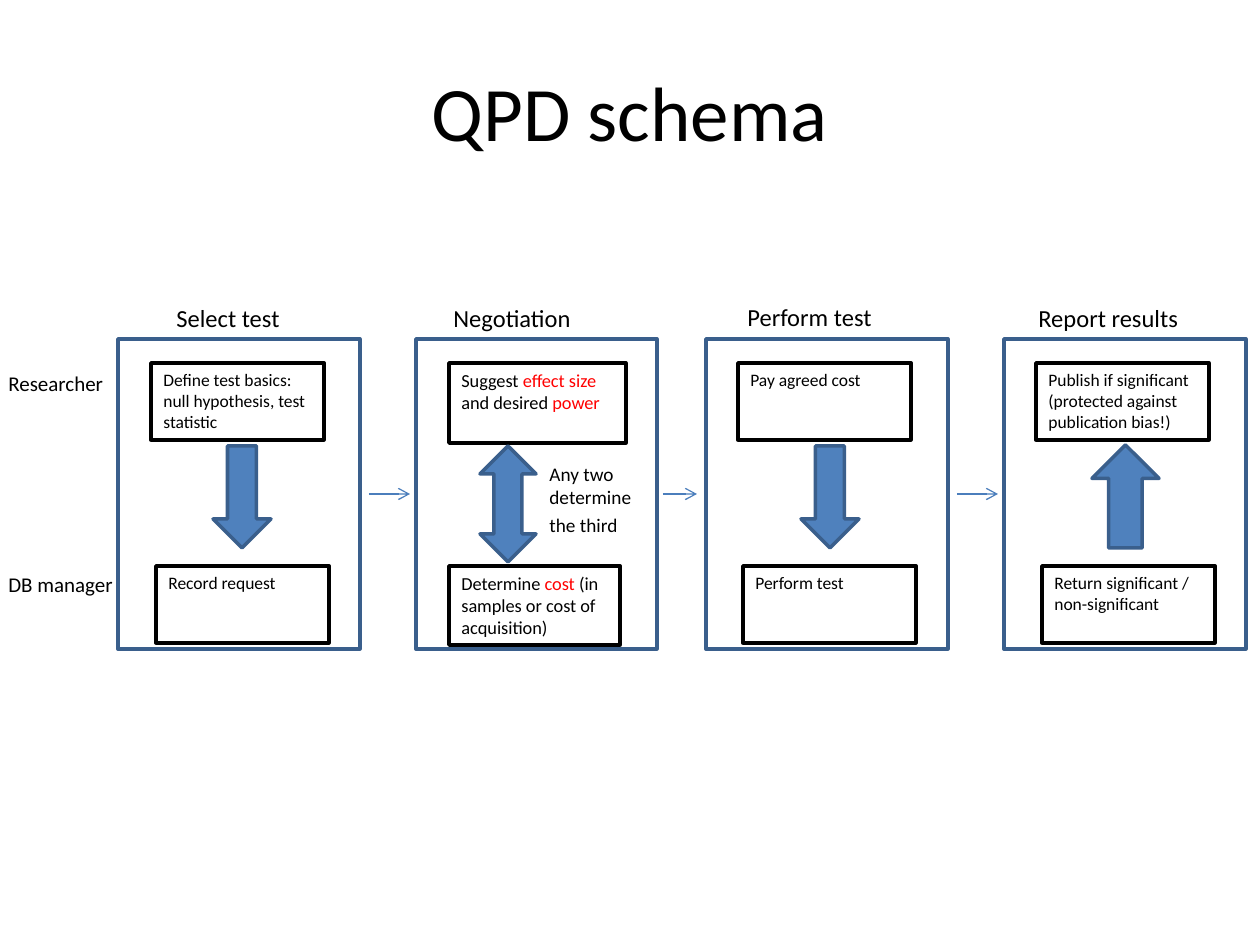
from dataclasses import dataclass

from lxml.etree import SubElement
from pptx import Presentation
from pptx.dml.color import RGBColor
from pptx.enum.shapes import MSO_CONNECTOR as Connector, MSO_SHAPE as Preset
from pptx.enum.text import MSO_ANCHOR as Anchor, PP_ALIGN as Align
from pptx.oxml.ns import qn
from pptx.util import Emu, Pt

PX = 914400 / 126
FONT = "Calibri"
COLORS = {
    "ink": "000000",
    "paper": "FFFFFF",
    "key": "FF0000",
    "arrow": "4F81BD",
    "frame": "3A5F8C",
    "flow": "4B7EBC",
}
PANEL_TOP, PANEL_HEIGHT = 339, 310
RESEARCHER_TOP, MANAGER_TOP = 363, 566
FLOW_Y = 494


@dataclass(frozen=True)
class Rect:
    left: int
    top: int
    width: int
    height: int


@dataclass(frozen=True)
class Run:
    text: str
    size: float
    color: str = "ink"


@dataclass(frozen=True)
class Step:
    left: int
    runs: tuple[Run, ...]
    width: int = 173
    height: int = 77


@dataclass(frozen=True)
class Phase:
    heading: Run
    heading_at: Rect
    left: int
    researcher: Step
    manager: Step
    arrow: Preset
    arrow_at: Rect
    width: int = 242


PHASES = (
    Phase(
        Run("Select test", 14), Rect(164, 297, 238, 43), 118,
        Step(151, (Run("Define test basics: null hypothesis, test statistic", 10),)),
        Step(156, (Run("Record request", 10),)),
        Preset.DOWN_ARROW, Rect(213, 446, 58, 102),
    ),
    Phase(
        Run("Negotiation", 14), Rect(441, 297, 222, 43), 416,
        Step(449, (Run("Suggest ", 10.5), Run("effect size ", 10.5, "key"),
                   Run("and desired ", 10.5), Run("power", 10.5, "key")), 177, 80),
        Step(449, (Run("Determine ", 10.5), Run("cost ", 10.5, "key"),
                   Run("(in samples or cost of acquisition)", 10.5)), 171, 79),
        Preset.UP_DOWN_ARROW, Rect(480, 446, 56, 116), 241,
    ),
    Phase(
        Run("Perform test", 14), Rect(735, 296, 238, 43), 706,
        Step(738, (Run("Pay agreed cost", 10),)),
        Step(743, (Run("Perform test", 10),)),
        Preset.DOWN_ARROW, Rect(801, 446, 58, 102),
    ),
    Phase(
        Run("Report results", 14), Rect(1026, 297, 238, 43), 1004,
        Step(1036, (Run("Publish if significant (protected against publication bias!)", 10),)),
        Step(1042, (Run("Return significant / non-significant", 10),)),
        Preset.UP_ARROW, Rect(1092, 445, 67, 103),
    ),
)
FLOWS = ((369, 410), (663, 697), (957, 998))
ROLES = (("Researcher", 364), ("DB manager", 565))


def px(length: int) -> Emu:
    return Emu(round(length * PX))


def place(rect: Rect) -> tuple[Emu, Emu, Emu, Emu]:
    return px(rect.left), px(rect.top), px(rect.width), px(rect.height)


def rgb(name: str) -> RGBColor:
    return RGBColor.from_string(COLORS[name])


def write(frame, runs: tuple[Run, ...], align: Align = Align.LEFT,
          anchor: Anchor = Anchor.TOP) -> None:
    frame.word_wrap = True
    frame.vertical_anchor = anchor
    paragraph = frame.paragraphs[0]
    paragraph.alignment = align
    for part in runs:
        run = paragraph.add_run()
        run.text = part.text
        run.font.name = FONT
        run.font.size = Pt(part.size)
        run.font.color.rgb = rgb(part.color)


def add_label(slide, rect: Rect, *runs: Run, align: Align = Align.LEFT,
              anchor: Anchor = Anchor.TOP) -> None:
    write(slide.shapes.add_textbox(*place(rect)).text_frame, runs, align, anchor)


def add_figure(slide, preset: Preset, rect: Rect, line: str, fill: str | None = None):
    figure = slide.shapes.add_shape(preset, *place(rect))
    figure.shadow.inherit = False
    if fill:
        figure.fill.solid()
        figure.fill.fore_color.rgb = rgb(fill)
    else:
        figure.fill.background()
    figure.line.color.rgb = rgb(line)
    figure.line.width = Pt(2)
    return figure


def add_step(slide, step: Step, top: int) -> None:
    rect = Rect(step.left, top, step.width, step.height)
    box = add_figure(slide, Preset.RECTANGLE, rect, "ink", "paper")
    write(box.text_frame, step.runs)


def add_phase(slide, phase: Phase) -> None:
    panel = Rect(phase.left, PANEL_TOP, phase.width, PANEL_HEIGHT)
    add_figure(slide, Preset.RECTANGLE, panel, "frame")
    add_label(slide, phase.heading_at, phase.heading)
    add_step(slide, phase.researcher, RESEARCHER_TOP)
    add_step(slide, phase.manager, MANAGER_TOP)
    add_figure(slide, phase.arrow, phase.arrow_at, "frame", "arrow")


def add_flow(slide, start: int, end: int) -> None:
    """Thin open-headed arrow from one phase to the next."""
    flow = slide.shapes.add_connector(
        Connector.STRAIGHT, px(start), px(FLOW_Y), px(end), px(FLOW_Y))
    flow.line.color.rgb = rgb("flow")
    flow.line.width = Pt(0.75)
    SubElement(flow.line._get_or_add_ln(), qn("a:tailEnd"), type="arrow")
    SubElement(flow._element.spPr, qn("a:effectLst"))


def main() -> None:
    deck = Presentation()
    deck.slide_width, deck.slide_height = px(1260), px(945)
    slide = deck.slides.add_slide(deck.slide_layouts[6])

    add_label(slide, Rect(63, 32, 1134, 157), Run("QPD schema", 44),
              align=Align.CENTER, anchor=Anchor.MIDDLE)
    for role, top in ROLES:
        add_label(slide, Rect(-4, top, 140, 40), Run(role, 12))
    for phase in PHASES:
        add_phase(slide, phase)
    add_label(slide, Rect(537, 456, 108, 89),
              Run("Any two determine the third", 11), Run(" ", 14))
    for start, end in FLOWS:
        add_flow(slide, start, end)

    deck.save("out.pptx")


if __name__ == "__main__":
    main()
